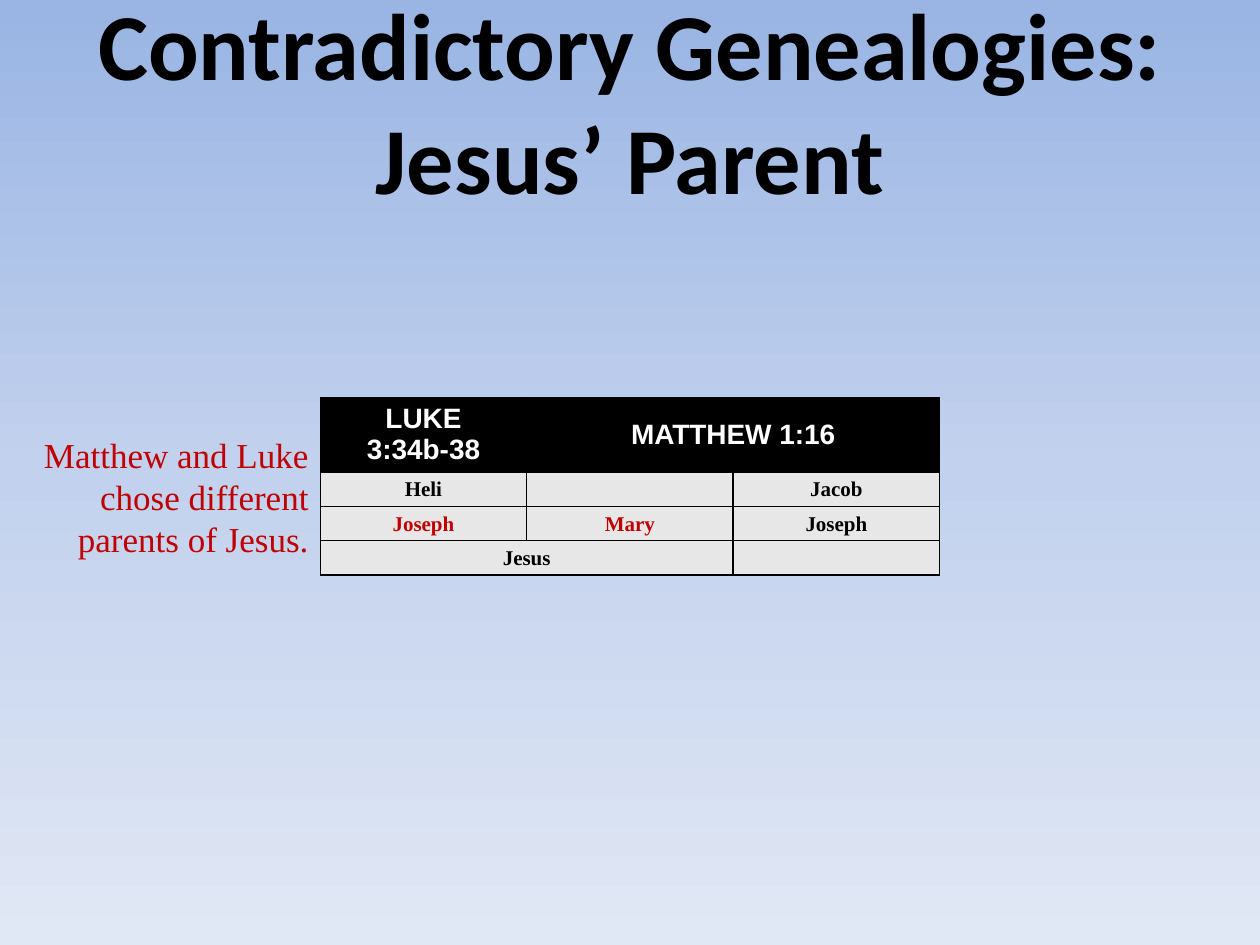
from copy import deepcopy
from dataclasses import dataclass

from lxml.etree import SubElement
from pptx import Presentation
from pptx.dml.color import RGBColor
from pptx.enum.text import MSO_ANCHOR, MSO_AUTO_SIZE, PP_ALIGN
from pptx.oxml.ns import qn
from pptx.slide import Slide
from pptx.table import Table, _Cell
from pptx.text.text import TextFrame
from pptx.util import Pt


@dataclass(frozen=True)
class TextStyle:
    font: str
    size: float
    color: str
    bold: bool = False
    alignment: PP_ALIGN = PP_ALIGN.CENTER


@dataclass(frozen=True)
class Theme:
    title: TextStyle = TextStyle("Calibri", 54, "000000", True)
    header: TextStyle = TextStyle("Arial", 16, "FFFFFF", True)
    name: TextStyle = TextStyle("Times New Roman", 12, "000000", True)
    parent: TextStyle = TextStyle("Times New Roman", 12, "C00000", True)
    caption: TextStyle = TextStyle("Times New Roman", 20, "C00000", False, PP_ALIGN.RIGHT)
    header_fill: str = "000000"
    body_fill: str = "E7E7E7"
    border: str = "000000"
    background: tuple[str, ...] = ("9AB5E4", "C2D1ED", "E1E8F5")


@dataclass(frozen=True)
class Entry:
    row: int
    column: int
    text: str
    style: TextStyle
    span: int = 1


THEME = Theme()
COLUMN_WIDTH = 118
ROW_HEIGHTS = (42.6, 19.6, 19.6, 19.6)
COLUMN_COUNT = 3
ENTRIES = (
    Entry(0, 0, "LUKE 3:34b-38", THEME.header),
    Entry(0, 1, "MATTHEW 1:16", THEME.header, 2),
    Entry(1, 0, "Heli", THEME.name),
    Entry(1, 1, "", THEME.name),
    Entry(1, 2, "Jacob", THEME.name),
    Entry(2, 0, "Joseph", THEME.parent),
    Entry(2, 1, "Mary", THEME.parent),
    Entry(2, 2, "Joseph", THEME.name),
    Entry(3, 0, "Jesus", THEME.name, 2),
    Entry(3, 2, "", THEME.name),
)


def write_text(frame: TextFrame, text: str, style: TextStyle) -> None:
    frame.text = text
    frame.word_wrap = True
    paragraph = frame.paragraphs[0]
    paragraph.alignment = style.alignment
    paragraph.font.name = style.font
    paragraph.font.size = Pt(style.size)
    paragraph.font.bold = style.bold
    paragraph.font.color.rgb = RGBColor.from_string(style.color)
    if not text:
        SubElement(paragraph._p, qn("a:endParaRPr"), sz=str(int(style.size * 100)))


def draw_borders(cell: _Cell) -> None:
    properties = cell._tc.get_or_add_tcPr()
    for position, side in enumerate(("a:lnL", "a:lnR", "a:lnT", "a:lnB")):
        line = SubElement(properties, qn(side), w=str(Pt(1)))
        fill = SubElement(line, qn("a:solidFill"))
        SubElement(fill, qn("a:srgbClr"), val=THEME.border)
        properties.insert(position, line)


def fill_cell(table: Table, entry: Entry) -> None:
    cell = table.cell(entry.row, entry.column)
    if entry.span > 1:
        cell.merge(table.cell(entry.row, entry.column + entry.span - 1))
    write_text(cell.text_frame, entry.text, entry.style)
    cell.vertical_anchor = MSO_ANCHOR.MIDDLE
    if entry.row > 0:
        cell.margin_left = cell.margin_right = cell.margin_top = Pt(0.7)
        cell.margin_bottom = Pt(0)


def add_genealogy_table(slide: Slide) -> None:
    shape = slide.shapes.add_table(
        len(ROW_HEIGHTS), COLUMN_COUNT, Pt(183), Pt(227),
        Pt(COLUMN_WIDTH * COLUMN_COUNT), Pt(sum(ROW_HEIGHTS)),
    )
    table = shape.table
    for column in table.columns:
        column.width = Pt(COLUMN_WIDTH)
    for row_index, (row, height) in enumerate(zip(table.rows, ROW_HEIGHTS)):
        row.height = Pt(height)
        color = THEME.body_fill if row_index else THEME.header_fill
        for cell in row.cells:
            cell.fill.solid()
            cell.fill.fore_color.rgb = RGBColor.from_string(color)
            draw_borders(cell)
    for entry in ENTRIES:
        fill_cell(table, entry)


def set_background(slide: Slide) -> None:
    fill = slide.background.fill
    fill.gradient()
    fill.gradient_angle = 270
    stop_list = slide.background._cSld.find(".//" + qn("a:gsLst"))
    stop_list.append(deepcopy(stop_list[0]))
    last = len(THEME.background) - 1
    for index, (stop, color) in enumerate(zip(fill.gradient_stops, THEME.background)):
        stop.position = index / last
        stop.color.rgb = RGBColor.from_string(color)


def add_title(slide: Slide) -> None:
    title = slide.shapes.title
    title.left, title.top, title.width, title.height = Pt(0), Pt(0), Pt(720), Pt(114)
    write_text(title.text_frame, "Contradictory Genealogies: Jesus’ Parent", THEME.title)
    title.text_frame.auto_size = MSO_AUTO_SIZE.NONE
    title.text_frame.vertical_anchor = MSO_ANCHOR.MIDDLE


def add_caption(slide: Slide) -> None:
    caption = slide.shapes.add_textbox(Pt(8.5), Pt(244), Pt(175), Pt(80))
    write_text(
        caption.text_frame,
        "Matthew and Luke chose different parents of Jesus.",
        THEME.caption,
    )
    caption.text_frame.auto_size = MSO_AUTO_SIZE.SHAPE_TO_FIT_TEXT


def main() -> None:
    presentation = Presentation()
    presentation.slide_width, presentation.slide_height = Pt(720), Pt(540)
    slide = presentation.slides.add_slide(presentation.slide_layouts[5])
    set_background(slide)
    add_title(slide)
    add_genealogy_table(slide)
    add_caption(slide)
    presentation.save("out.pptx")


if __name__ == "__main__":
    main()
